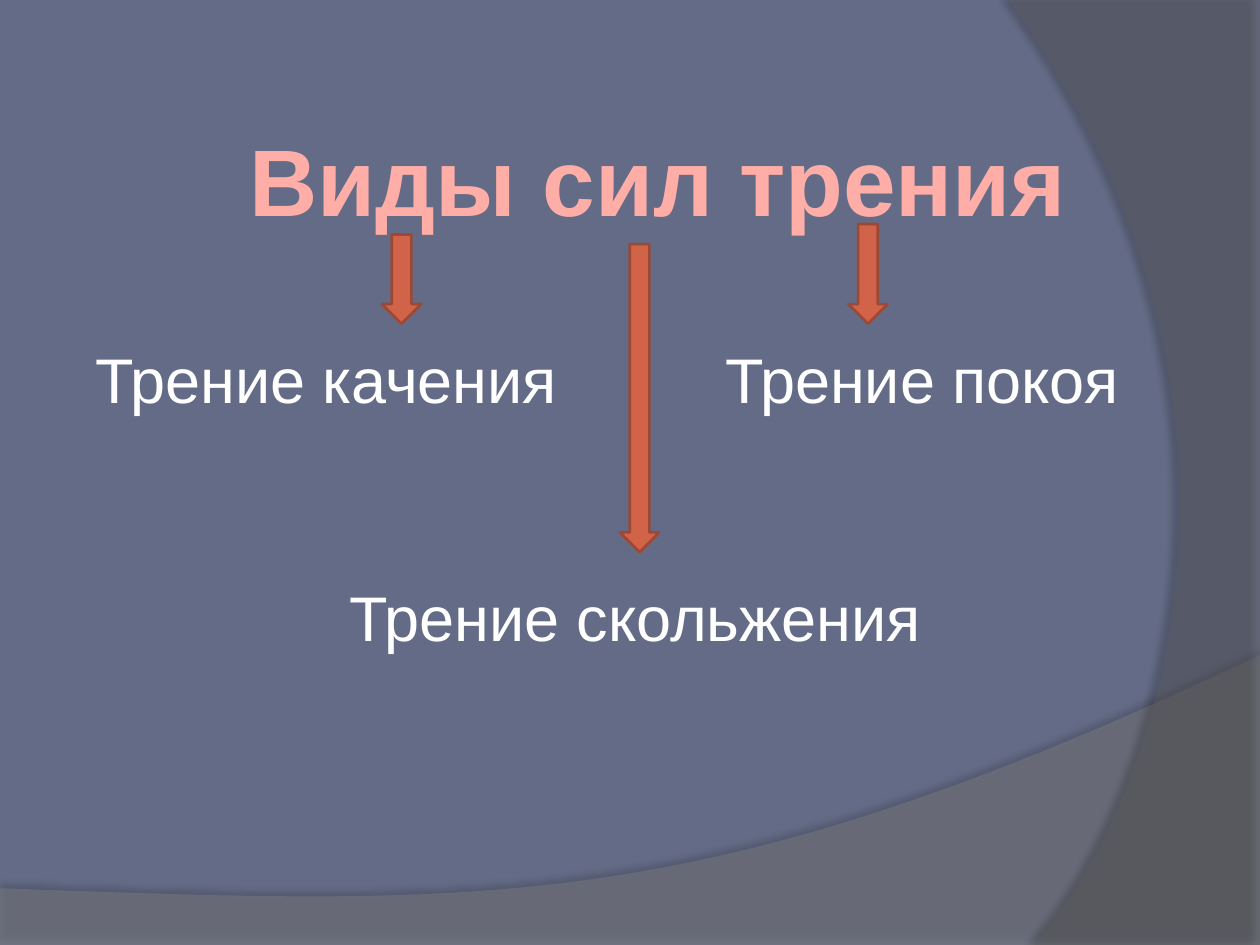
from lxml import etree
from pptx import Presentation
from pptx.dml.color import RGBColor
from pptx.enum import shapes, text
from pptx.oxml.ns import qn
from pptx.util import Pt

FONT = "Arial"
BACKGROUND = RGBColor(0x64, 0x6B, 0x86)
WHITE = RGBColor(0xFF, 0xFF, 0xFF)
TITLE_COLOR = RGBColor(0xFF, 0xAE, 0xA7)
ARROW_FILL = RGBColor(0xD1, 0x63, 0x49)
ARROW_LINE = RGBColor(0x9B, 0x49, 0x36)
LOWER_GRAY = RGBColor(0x7F, 0x7F, 0x7F)
RIGHT_GRAY = RGBColor(0x5E, 0x5E, 0x5E)

# Content; all lengths in points
WIDTH, HEIGHT = 720, 540
TITLE = ("Виды сил трения", (133, 66, 486, 73))
LABELS = [  # wording, left, top, width
    ("Трение качения", 25, 191, 323),
    ("Трение скольжения", 139, 327, 448),
    ("Трение покоя", 388, 191, 278),
]
LABEL_HEIGHT = 51
ARROWS = [  # centre, top, bottom
    (229.5, 134, 185),
    (496, 128, 185),
    (365.5, 139.5, 315.5),
]
ARROW_WIDTH = 22.5
# Waves: straight corners, then a Bézier curve starting at the last corner
WAVES = [
    dict(corners=[(0, 507.6), (0, 540), (720, 540), (720, 374.4)],
         curve=[(402.5, 525), (281.5, 517.7), (0, 507.6)],
         color=LOWER_GRAY, opacity=45, shadow_opacity=35, distance=3.5, angle=270),
    dict(corners=[(720, 0), (720, 540), (591, 540)],
         curve=[(673, 445.7), (733, 216), (576, 0)],
         color=RIGHT_GRAY, opacity=40, shadow_opacity=45, distance=4, angle=180),
]
SHADOW_BLUR = 4
CURVE_STEPS = 60


def bezier(start, first, second, end):
    """Return points along a cubic curve, without its start."""
    points = []
    for step in range(1, CURVE_STEPS + 1):
        t = step / CURVE_STEPS
        weights = ((1 - t) ** 3, 3 * t * (1 - t) ** 2, 3 * t * t * (1 - t), t ** 3)
        points.append(tuple(
            sum(weight * value for weight, value in zip(weights, values))
            for values in zip(start, first, second, end)))
    return points


def set_opacity(color_element, percent):
    alpha = etree.SubElement(color_element, qn("a:alpha"))
    alpha.set("val", str(percent * 1000))


def add_wave(slide, wave):
    corners = wave["corners"]
    points = [(Pt(x), Pt(y)) for x, y in corners + bezier(corners[-1], *wave["curve"])]
    builder = slide.shapes.build_freeform(*points[0])
    builder.add_line_segments(points[1:], close=True)
    shape = builder.convert_to_shape()
    shape.fill.solid()
    shape.fill.fore_color.rgb = wave["color"]
    shape.line.fill.background()
    properties = shape._element.spPr
    set_opacity(properties.find(".//" + qn("a:solidFill"))[0], wave["opacity"])

    # Soft outer shadow
    shape.shadow.inherit = False
    effects = properties.find(qn("a:effectLst"))
    shadow = etree.SubElement(effects, qn("a:outerShdw"))
    shadow.set("blurRad", str(Pt(SHADOW_BLUR)))
    shadow.set("dist", str(Pt(wave["distance"])))
    shadow.set("dir", str(wave["angle"] * 60000))
    shadow.set("rotWithShape", "0")
    color = etree.SubElement(shadow, qn("a:srgbClr"), val="000000")
    set_opacity(color, wave["shadow_opacity"])
    return shape


def write(shape, wording, size, color, bold=False, wrap=True):
    frame = shape.text_frame
    frame.text = wording
    frame.word_wrap = wrap
    frame.auto_size = text.MSO_AUTO_SIZE.NONE
    frame.vertical_anchor = text.MSO_ANCHOR.TOP
    paragraph = frame.paragraphs[0]
    paragraph.alignment = text.PP_ALIGN.CENTER
    font = paragraph.font
    font.name, font.size, font.bold = FONT, Pt(size), bold
    font.color.rgb = color


def main():
    presentation = Presentation()
    presentation.slide_width, presentation.slide_height = Pt(WIDTH), Pt(HEIGHT)
    slide = presentation.slides.add_slide(presentation.slide_layouts[5])
    slide.background.fill.solid()
    slide.background.fill.fore_color.rgb = BACKGROUND

    # Waves, placed behind the title
    title = slide.shapes.title
    for wave in WAVES:
        title._element.addprevious(add_wave(slide, wave)._element)

    # Title
    wording, box = TITLE
    title.left, title.top, title.width, title.height = map(Pt, box)
    write(title, wording, 54, TITLE_COLOR, bold=True, wrap=False)

    # Kinds of friction
    for wording, left, top, width in LABELS:
        label = slide.shapes.add_textbox(Pt(left), Pt(top), Pt(width), Pt(LABEL_HEIGHT))
        write(label, wording, 36, WHITE)

    # Arrows from the title to each kind
    for centre, top, bottom in ARROWS:
        arrow = slide.shapes.add_shape(
            shapes.MSO_SHAPE.DOWN_ARROW, Pt(centre - ARROW_WIDTH / 2), Pt(top),
            Pt(ARROW_WIDTH), Pt(bottom - top))
        arrow.shadow.inherit = False
        arrow.fill.solid()
        arrow.fill.fore_color.rgb = ARROW_FILL
        arrow.line.color.rgb = ARROW_LINE
        arrow.line.width = Pt(1.5)

    presentation.save("out.pptx")


if __name__ == "__main__":
    main()
